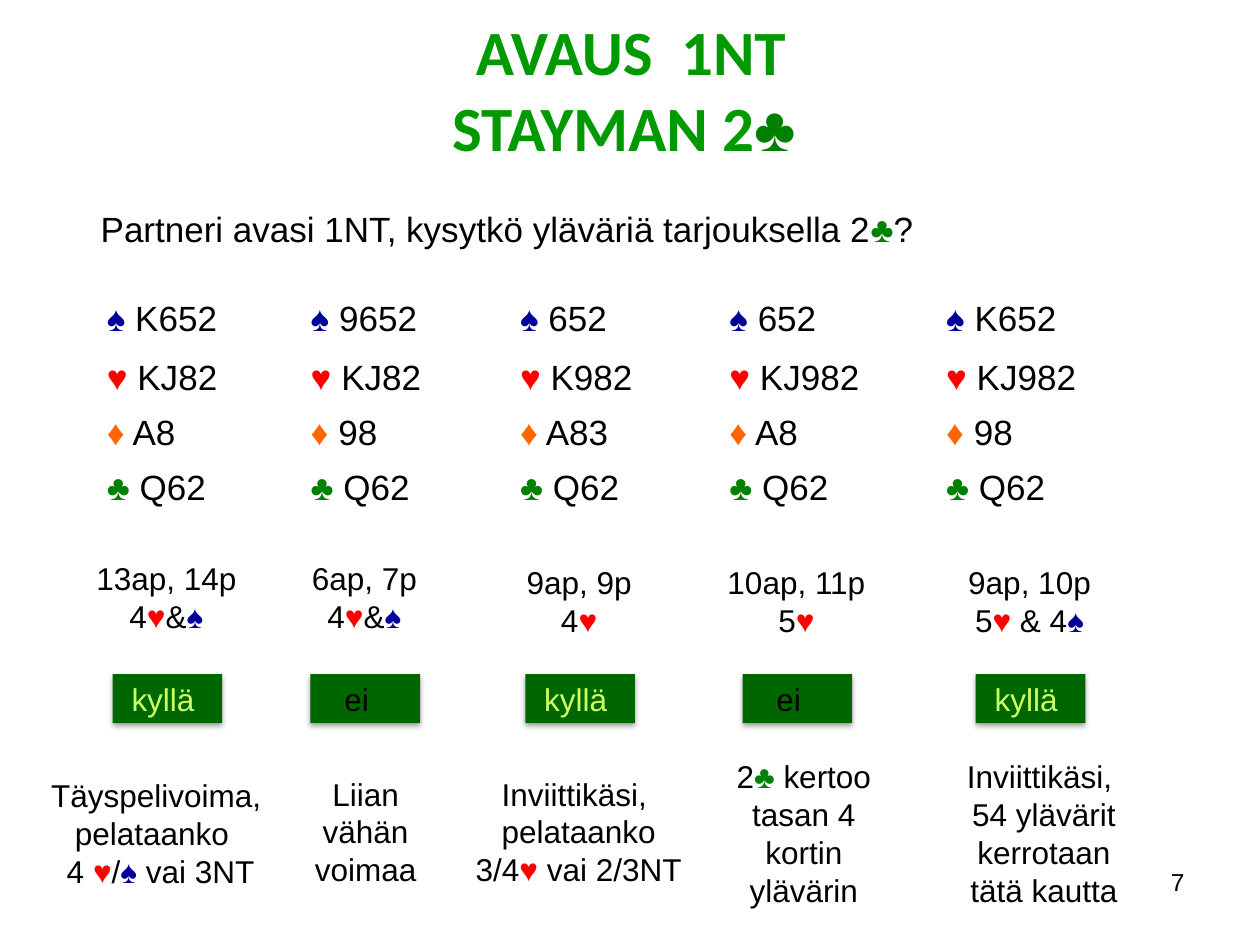
from itertools import accumulate, groupby
from lxml import etree
from pptx import Presentation
from pptx.dml.color import RGBColor as Rgb
from pptx.enum.shapes import MSO_SHAPE as Shape
from pptx.enum.text import MSO_AUTO_SIZE as Auto, MSO_ANCHOR as Anchor, PP_ALIGN as Align
from pptx.oxml.ns import qn
from pptx.util import Cm, Pt

COLORS = {
    "♠": "000099", "♥": "FF0000", "♦": "FF6600", "♣": "008000",
    "text": "000000", "title": "009900", "badge": "006600", "yes": "CCFF66",
}
SUITS = "♠♥♦♣"
HANDS = [
    ("K652", "KJ82", "A8", "Q62"),
    ("9652", "KJ82", "98", "Q62"),
    ("652", "K982", "A83", "Q62"),
    ("652", "KJ982", "A8", "Q62"),
    ("K652", "KJ982", "98", "Q62"),
]
COLS = [4.11, 4.22, 4.22, 4.37, 4.29]
ROWS = [1.19, 1.1, 1.1, 1.1]
POINTS = [
    (1.45, 11.15, "13ap, 14p\n4♥&♠"),
    (5.44, 11.15, "6ap, 7p\n4♥&♠"),
    (9.77, 11.23, "9ap, 9p\n4♥"),
    (14.15, 11.23, "10ap, 11p\n5♥"),
    (18.85, 11.23, "9ap, 10p\n5♥ & 4♠"),
]
ANSWERS = [True, False, True, False, True]
NOTES = [
    (0.71, 15.52, 4.88, 2.57, "Täyspelivoima, pelataanko \n 4 ♥/♠ vai 3NT"),
    (5.87, 15.49, 3, 2.57, "Liian vähän voimaa"),
    (9.19, 15.49, 4.95, 2.57, "Inviittikäsi, \npelataanko 3/4♥ vai 2/3NT"),
    (14.53, 15.14, 3.35, 3.33, "2♣ kertoo tasan 4 kortin ylävärin"),
    (18.85, 15.14, 4.39, 3.33, "Inviittikäsi, \n54 ylävärit kerrotaan tätä kautta"),
]


def write(frame, text, size=18, align=Align.CENTER, color="text", font="Arial"):
    para = frame.paragraphs[0]
    para.alignment = align
    para.font.size = Pt(size)
    para.font.name = font
    for row, line in enumerate(text.split("\n")):
        if row:
            para.add_line_break()
        for suit, chars in groupby(line, lambda char: char if char in SUITS else ""):
            run = para.add_run()
            run.text = "".join(chars)
            run.font.color.rgb = Rgb.from_string(COLORS[suit or color])
            if suit and font != "Arial":
                run.font.name = "Arial"
    return para


def add_text(slide, box, text, grow=True, **style):
    frame = slide.shapes.add_textbox(*map(Cm, box)).text_frame
    frame.word_wrap = True
    if grow:
        frame.auto_size = Auto.SHAPE_TO_FIT_TEXT
    return write(frame, text, **style)


def add_shade(shape):
    shape.shadow.inherit = False
    effects = shape.element.spPr.find(qn("a:effectLst"))
    shade = etree.SubElement(effects, qn("a:outerShdw"), blurRad="40000",
                             dist="23000", dir="5400000", rotWithShape="0")
    black = etree.SubElement(shade, qn("a:srgbClr"), val="000000")
    etree.SubElement(black, qn("a:alpha"), val="35000")


def add_badge(slide, left, yes):
    badge = slide.shapes.add_shape(
        Shape.RECTANGLE, Cm(left), Cm(13.59), Cm(2.21), Cm(0.99))
    badge.fill.solid()
    badge.fill.fore_color.rgb = Rgb.from_string(COLORS["badge"])
    badge.line.fill.background()
    add_shade(badge)
    frame = badge.text_frame
    frame.vertical_anchor = Anchor.MIDDLE
    frame.auto_size = Auto.SHAPE_TO_FIT_TEXT
    write(frame, "kyllä " if yes else "ei  ", color="yes" if yes else "text")


def add_hands(slide):
    table = slide.shapes.add_table(
        len(ROWS), len(COLS), Cm(1.9), Cm(5.92), Cm(sum(COLS)), Cm(sum(ROWS))).table
    table.first_row = table.horz_banding = False
    for col, width in zip(table.columns, COLS):
        col.width = Cm(width)
    for row, height in zip(table.rows, ROWS):
        row.height = Cm(height)
    for col, hand in enumerate(HANDS):
        for row, (suit, cards) in enumerate(zip(SUITS, hand)):
            cell = table.cell(row, col)
            cell.fill.background()
            write(cell.text_frame, f"{suit} {cards}", size=20, align=Align.JUSTIFY)


def main():
    deck = Presentation()
    deck.slide_width, deck.slide_height = Cm(25.4), Cm(19.05)
    slide = deck.slides.add_slide(deck.slide_layouts[6])
    title = add_text(slide, (0.3, 0.13, 24.84, 3.33), "AVAUS  1NT\nSTAYMAN 2♣ ",
                     size=36, color="title", font="Calibri")
    title.font.bold = True
    add_hands(slide)
    add_text(slide, (1.78, 4.06, 18.08, 1.12),
             "Partneri avasi 1NT, kysytkö yläväriä tarjouksella 2♣?",
             size=20, align=Align.LEFT)
    for (left, top, text), yes in zip(POINTS, ANSWERS):
        add_text(slide, (left, top, 3.81, 1.8), text)
        add_badge(slide, left + 0.82, yes)
    for *box, text in NOTES:
        add_text(slide, box, text)
    add_text(slide, (18.21, 17.35, 5.92, 1.32), "7", grow=False,
             size=14, align=Align.RIGHT)
    deck.save("out.pptx")


if __name__ == "__main__":
    main()
